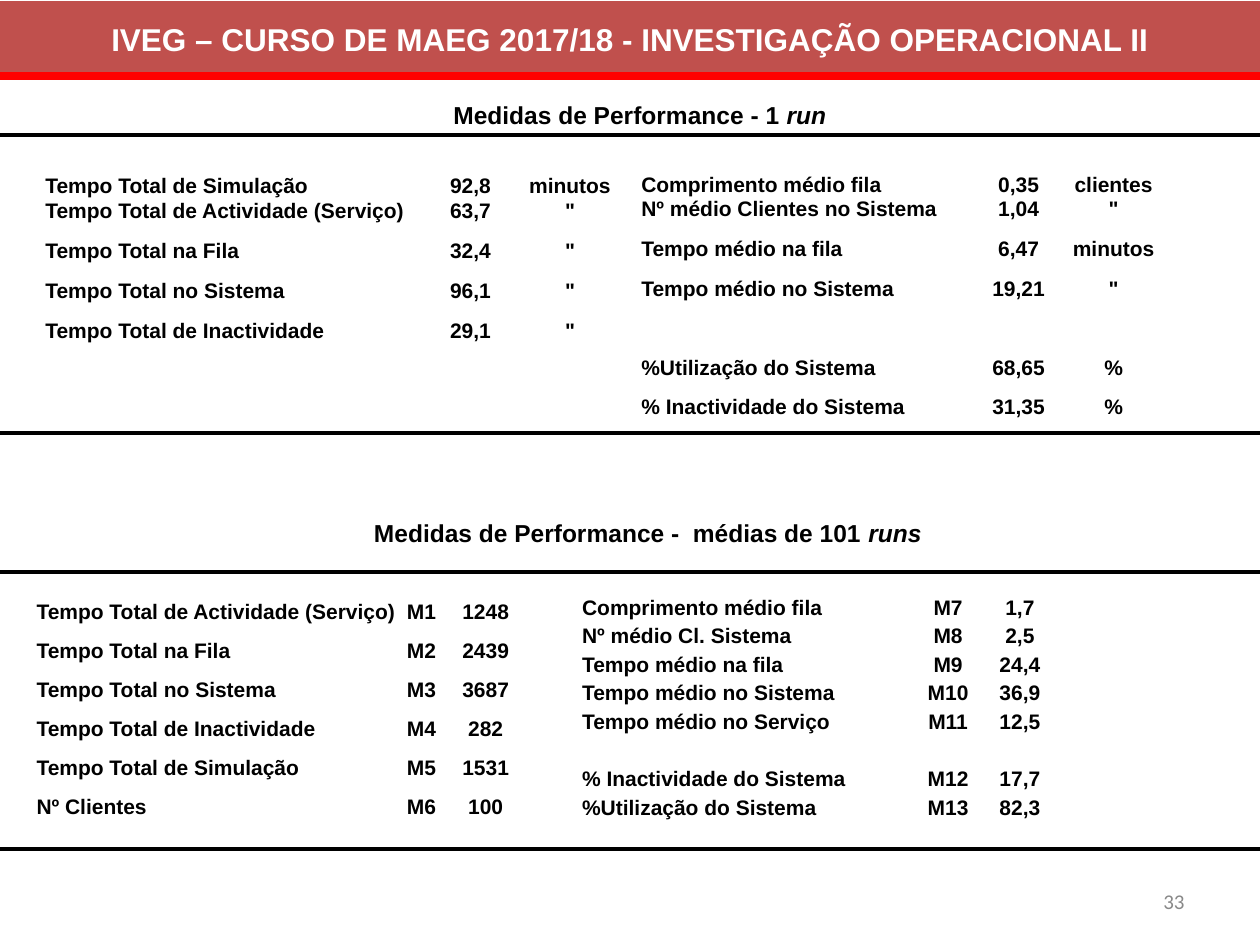
from dataclasses import dataclass

from lxml.etree import SubElement
from pptx import Presentation
from pptx.dml.color import RGBColor
from pptx.enum.shapes import MSO_CONNECTOR as Connector, MSO_SHAPE as Preset
from pptx.enum.text import MSO_ANCHOR as Anchor, PP_ALIGN as Align
from pptx.oxml.ns import qn
from pptx.slide import Slide
from pptx.util import Inches, Pt

WIDTH, HEIGHT = Inches(10), Inches(7.5)
COL, ROW = WIDTH / 100, HEIGHT / 75
BRICK = RGBColor(0xC0, 0x50, 0x4D)
RED = RGBColor(0xFF, 0x00, 0x00)
BLACK = RGBColor(0x00, 0x00, 0x00)
WHITE = RGBColor(0xFF, 0xFF, 0xFF)
GREY = RGBColor(0x89, 0x89, 0x89)


@dataclass(frozen=True)
class Rule:
    row: float
    color: RGBColor = BLACK
    weight: float = 2.25


@dataclass(frozen=True)
class Heading:
    col: float
    row: float
    cols: float
    text: str
    emphasis: str


@dataclass(frozen=True)
class Measures:
    col: float
    row: float
    widths: list[float]
    heights: list[float]
    entries: dict[int, tuple[str, str, str]]
    merges: list[tuple[int, int, int]]


RULES = [Rule(6, RED, 4.5), Rule(10.7), Rule(34.4), Rule(45.4), Rule(67.4)]

HEADINGS = [
    Heading(35, 7.45, 44.9, "Medidas de Performance - 1 ", "run"),
    Heading(28.7, 40.6, 48, "Medidas de Performance -  médias de 101 ", "runs"),
]

TABLES = [
    Measures(
        3.5, 8.3, [7.2, 6.2, 1, 12.4, 3.1, 7.9, 7.9],
        [2.2, 3.2, 2, 2] + [3.18] * 4,
        {
            2: ("Tempo Total de Simulação", "92,8", "minutos"),
            3: ("Tempo Total de Actividade (Serviço)", "63,7", '"'),
            4: ("Tempo Total na Fila", "32,4", '"'),
            5: ("Tempo Total no Sistema", "96,1", '"'),
            6: ("Tempo Total de Inactividade", "29,1", '"'),
        },
        [(0, 2, 5), (1, 2, 4), (2, 0, 4), (3, 0, 4), (4, 0, 3), (5, 0, 3),
         (6, 0, 3), (7, 1, 2)],
    ),
    Measures(
        50.8, 12.3, [6.7, 6.7, 6.7, 2, 4.6, 6.7, 8.4],
        [3.3, 1.95] + [3.14] * 5,
        {
            0: ("Comprimento médio fila", "0,35", "clientes"),
            1: ("Nº médio Clientes no Sistema", "1,04", '"'),
            2: ("Tempo médio na fila", "6,47", "minutos"),
            3: ("Tempo médio no Sistema", "19,21", '"'),
            5: ("%Utilização do Sistema", "68,65", "%"),
            6: ("% Inactividade do Sistema", "31,35", "%"),
        },
        [(0, 0, 2), (0, 3, 4), (1, 0, 4), (2, 0, 3), (3, 0, 3), (4, 2, 3),
         (5, 0, 3), (6, 0, 3)],
    ),
    Measures(
        2.8, 47.4, [23.6, 5.5, 3.1, 7.1], [2.1] + [3.1] * 5,
        {
            0: ("Tempo Total de Actividade (Serviço)", "M1", "1248"),
            1: ("Tempo Total na Fila", "M2", "2439"),
            2: ("Tempo Total no Sistema", "M3", "3687"),
            3: ("Tempo Total de Inactividade", "M4", "282"),
            4: ("Tempo Total de Simulação", "M5", "1531"),
            5: ("Nº Clientes", "M6", "100"),
        },
        [(0, 0, 1)],
    ),
    Measures(
        46.1, 46.9, [23.8, 2.5, 5.7, 5.7], [2.27] * 8,
        {
            0: ("Comprimento médio fila", "M7", "1,7"),
            1: ("Nº médio Cl. Sistema", "M8", "2,5"),
            2: ("Tempo médio na fila", "M9", "24,4"),
            3: ("Tempo médio no Sistema", "M10", "36,9"),
            4: ("Tempo médio no Serviço", "M11", "12,5"),
            6: ("% Inactividade do Sistema", "M12", "17,7"),
            7: ("%Utilização do Sistema", "M13", "82,3"),
        },
        [],
    ),
]


def place(col: float, row: float, cols: float, rows: float) -> tuple[int, int, int, int]:
    """Convert grid units to a left, top, width and height."""
    return round(col * COL), round(row * ROW), round(cols * COL), round(rows * ROW)


def style(paragraph, size: float, color: RGBColor = BLACK, bold: bool = True,
          face: str = "Arial", align: Align = Align.LEFT) -> None:
    """Format every run of a paragraph."""
    paragraph.alignment = align
    for run in paragraph.runs:
        run.font.name, run.font.size, run.font.bold = face, Pt(size), bold
        run.font.color.rgb = color


def draw_banner(slide: Slide, text: str) -> None:
    """Draw the course banner."""
    banner = slide.shapes.add_shape(Preset.RECTANGLE, *place(0, 0.1, 100, 6))
    banner.shadow.inherit = False
    banner.fill.solid()
    banner.fill.fore_color.rgb = BRICK
    banner.line.fill.background()
    banner.text_frame.text = text
    banner.text_frame.vertical_anchor = Anchor.MIDDLE
    style(banner.text_frame.paragraphs[0], 18, WHITE, align=Align.CENTER)


def draw_rule(slide: Slide, rule: Rule) -> None:
    """Draw a rule across the whole slide."""
    y = round(rule.row * ROW)
    line = slide.shapes.add_connector(Connector.STRAIGHT, 0, y, WIDTH, y)
    line.line.color.rgb, line.line.width = rule.color, Pt(rule.weight)
    SubElement(line._element.spPr, qn("a:effectLst"))


def draw_heading(slide: Slide, heading: Heading) -> None:
    """Draw a section heading that ends in italics."""
    box = slide.shapes.add_textbox(*place(heading.col, heading.row, heading.cols, 3.4))
    box.text_frame.word_wrap = True
    paragraph = box.text_frame.paragraphs[0]
    paragraph.text = heading.text
    emphasis = paragraph.add_run()
    emphasis.text = heading.emphasis
    emphasis.font.italic = True
    style(paragraph, 14)


def clear_cell(cell) -> None:
    """Remove a cell's borders and fill, and make its empty line small."""
    properties = cell._tc.get_or_add_tcPr()
    for side in ("L", "R", "T", "B"):
        border = SubElement(properties, qn(f"a:ln{side}"), w="0")
        SubElement(border, qn("a:noFill"))
    cell.fill.background()
    cell.vertical_anchor = Anchor.BOTTOM
    cell.margin_left = cell.margin_right = cell.margin_top = Inches(0.01)
    cell.margin_bottom = 0
    SubElement(cell.text_frame.paragraphs[0]._p, qn("a:endParaRPr"), sz="1000")


def draw_measures(slide: Slide, measures: Measures) -> None:
    """Draw a plain table of labels with two centred columns."""
    frame = slide.shapes.add_table(
        len(measures.heights), len(measures.widths),
        *place(measures.col, measures.row, sum(measures.widths), sum(measures.heights)))
    table = frame.table
    table.first_row = table.horz_banding = False
    for column, width in zip(table.columns, measures.widths):
        column.width = round(width * COL)
    for row, height in zip(table.rows, measures.heights):
        row.height = round(height * ROW)
    for cell in table.iter_cells():
        clear_cell(cell)
    for row, first, last in measures.merges:
        table.cell(row, first).merge(table.cell(row, last))
    value_column = len(measures.widths) - 2
    for row, entry in measures.entries.items():
        for column, text in zip((0, value_column, value_column + 1), entry):
            paragraph = table.cell(row, column).text_frame.paragraphs[0]
            paragraph.text = text
            style(paragraph, 12, align=Align.CENTER if column else Align.LEFT)


def draw_page_number(slide: Slide, number: str) -> None:
    """Draw the page number at the lower right."""
    box = slide.shapes.add_textbox(*place(71.7, 69.5, 23.3, 4))
    box.text_frame.word_wrap = True
    box.text_frame.vertical_anchor = Anchor.MIDDLE
    box.text_frame.text = number
    style(box.text_frame.paragraphs[0], 12, GREY, False, "Calibri", Align.RIGHT)


def main() -> None:
    """Build the performance measures slide."""
    deck = Presentation()
    deck.slide_width, deck.slide_height = WIDTH, HEIGHT
    slide = deck.slides.add_slide(deck.slide_layouts[6])
    draw_banner(slide, "IVEG – CURSO DE MAEG 2017/18 - INVESTIGAÇÃO OPERACIONAL II")
    for draw, parts in ((draw_measures, TABLES), (draw_rule, RULES), (draw_heading, HEADINGS)):
        for part in parts:
            draw(slide, part)
    draw_page_number(slide, "33")
    deck.save("out.pptx")


if __name__ == "__main__":
    main()
